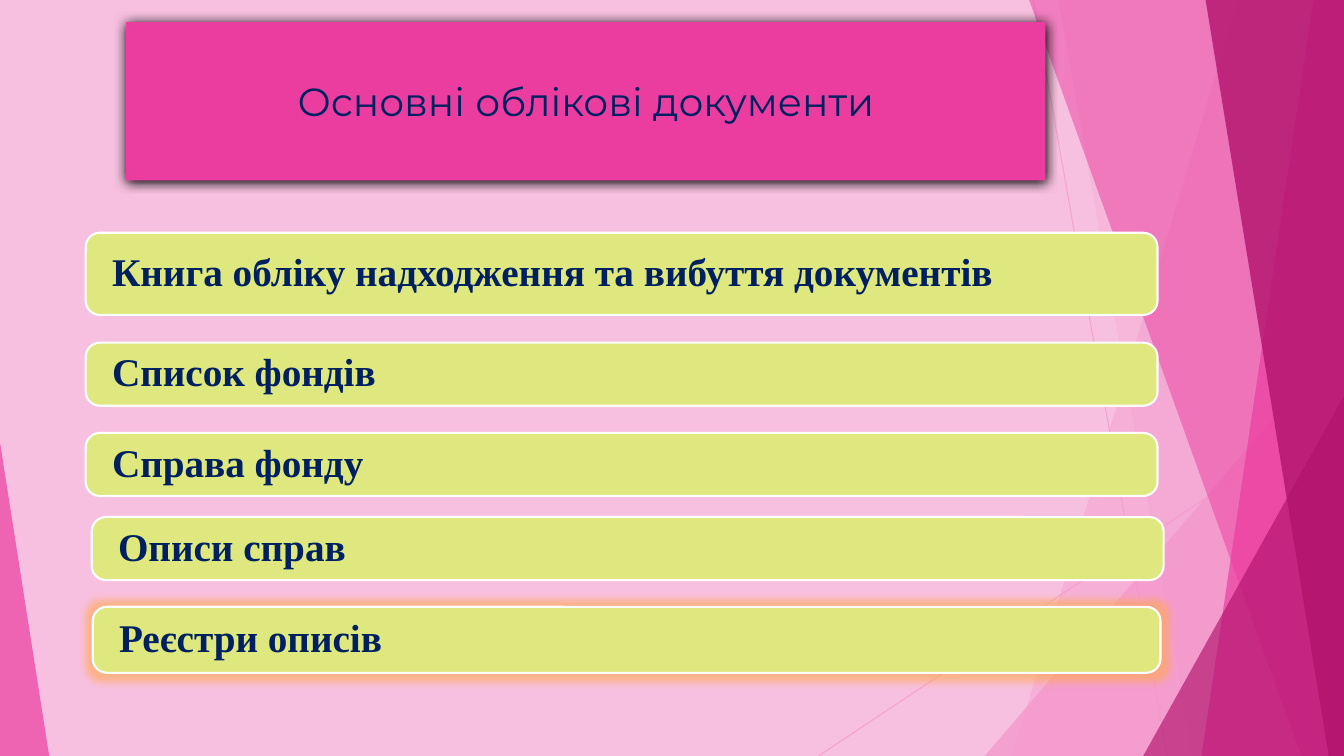
from dataclasses import dataclass

from lxml import etree
from pptx import Presentation, util as u
from pptx.dml.color import RGBColor
from pptx.enum import shapes, text
from pptx.oxml import ns


@dataclass(frozen=True)
class Theme:
    ground: str = "F8C0E0"
    light: str = "F496CB"
    pink: str = "EB3D9F"
    plum: str = "B2136D"
    card: str = "DEE87E"
    ink: str = "002060"
    border: str = "FFFFFF"
    shade: str = "000000"
    glow: str = "FFAA50"
    title_font: str = "Montserrat"
    card_font: str = "Times New Roman"
    size: float = 28
    hairline: float = 0.75
    outline: float = 1.5


THEME = Theme()


@dataclass(frozen=True)
class Box:
    left: int
    top: int
    width: int
    height: int

    def point(self, column, row):
        return (self.left + round(self.width * column / 100),
                self.top + round(self.height * row / 100))

    def region(self, column, row, columns, rows):
        return Box(*self.point(column, row),
                   round(self.width * columns / 100),
                   round(self.height * rows / 100))

    @property
    def bounds(self):
        return self.left, self.top, self.width, self.height


def add_node(parent, tag, **attributes):
    node = etree.SubElement(parent, ns.qn(tag))
    for name, value in attributes.items():
        node.set(name, str(value))
    return node


def paint(fill, color):
    fill.solid()
    fill.fore_color.rgb = RGBColor.from_string(color)


def fade(shape, opacity):
    for color in shape._element.spPr.iter(ns.qn("a:srgbClr")):
        add_node(color, "a:alpha", val=opacity * 1000)


def add_effect(shape, tag, color, opacity, **attributes):
    shape.shadow.inherit = False
    effects = shape._element.spPr.find(ns.qn("a:effectLst"))
    effect = add_node(effects, tag, **attributes)
    add_node(add_node(effect, "a:srgbClr", val=color),
             "a:alpha", val=opacity * 1000)


def write(frame, words, font, bold, align):
    frame.word_wrap = True
    frame.auto_size = text.MSO_AUTO_SIZE.NONE
    frame.vertical_anchor = text.MSO_ANCHOR.MIDDLE
    para = frame.paragraphs[0]
    para.text = words
    para.alignment = align
    para.font.name = font
    para.font.size = u.Pt(THEME.size)
    para.font.bold = bold
    para.font.color.rgb = RGBColor.from_string(THEME.ink)
    return para


def draw_facets(page, box):
    for start, end in (((76.88, 0), (86.84, 100)), ((100, 53.73), (60.9, 100))):
        line = page.shapes.add_connector(
            shapes.MSO_CONNECTOR.STRAIGHT, *box.point(*start), *box.point(*end))
        line.line.width = u.Pt(THEME.hairline)
        paint(line.line.fill, THEME.light)
        fade(line, 70)
        add_node(line._element.spPr, "a:effectLst")

    right_edge = [(100, 0), (100, 100)]
    facets = [
        ([(92.1, 0), *right_edge, (75.3, 100)], THEME.light, 36),
        ([(78.75, 0), *right_edge, (88.75, 100)], THEME.light, 20),
        ([(100, 44.4), (100, 100), (73.27, 100)], THEME.light, 72),
        ([(76.57, 0), *right_edge, (96.82, 100)], THEME.pink, 50),
        ([(97.72, 0), *right_edge, (89.4, 100)], THEME.pink, 70),
        ([(89.7, 0), *right_edge, (98.86, 100)], THEME.plum, 80),
        ([(100, 52.4), (100, 100), (85.06, 100)], THEME.plum, 66),
        ([(0, 58.53), (3.66, 100), (0, 100)], THEME.pink, 70),
    ]
    for corners, color, opacity in facets:
        first, *others = [box.point(*corner) for corner in corners]
        builder = page.shapes.build_freeform(*first)
        builder.add_line_segments(others, close=True)
        facet = builder.convert_to_shape()
        facet.shadow.inherit = False
        facet.line.fill.background()
        paint(facet.fill, color)
        fade(facet, opacity)


def draw_title(page, box, words):
    title = page.shapes.title
    title.left, title.top, title.width, title.height = box.bounds
    outline = add_node(title._element.spPr, "a:prstGeom", prst="ellipse")
    add_node(outline, "a:avLst")
    paint(title.fill, THEME.pink)
    title.line.fill.background()
    add_effect(title, "a:outerShdw", THEME.shade, 100,
               blurRad=u.Pt(8.5), dist=u.Pt(1), dir=5400000, rotWithShape=0)
    write(title.text_frame, words, THEME.title_font, False, text.PP_ALIGN.CENTER)
    page.shapes._spTree.append(title._element)


def draw_card(page, box, words):
    card = page.shapes.add_shape(
        shapes.MSO_SHAPE.ROUNDED_RECTANGLE, *box.bounds)
    card.adjustments[0] = u.Inches(0.14) / box.height
    card.shadow.inherit = False
    paint(card.fill, THEME.card)
    paint(card.line.fill, THEME.border)
    card.line.width = u.Pt(THEME.outline)
    frame = card.text_frame
    frame.margin_left = frame.margin_right = u.Inches(0.22)
    frame.margin_top = frame.margin_bottom = 0
    para = write(frame, words, THEME.card_font, True, text.PP_ALIGN.LEFT)
    para.line_spacing = 0.9
    return card


def draw_documents(page, box):
    documents = [
        ("Книга обліку надходження та вибуття документів", (0, 0, 99.44, 18.67)),
        ("Список фондів", (0, 24.97, 99.44, 14.32)),
        ("Справа фонду", (0, 45.48, 99.44, 14.32)),
        ("Описи справ", (0.56, 64.6, 99.44, 14.32)),
        ("Реєстри описів", (0.65, 85, 99.06, 15)),
    ]
    for words, place in documents:
        card = draw_card(page, box.region(*place), words)
    add_effect(card, "a:glow", THEME.glow, 60, rad=u.Pt(11))


def main():
    deck = Presentation()
    deck.slide_width, deck.slide_height = u.Inches(13.33), u.Inches(7.5)
    page = deck.slides.add_slide(deck.slide_layouts.get_by_name("Title Only"))
    paint(page.background.fill, THEME.ground)
    whole = Box(0, 0, deck.slide_width, deck.slide_height)
    draw_facets(page, whole)
    draw_title(page, whole.region(9.38, 2.93, 68.4, 20.93),
               "Основні облікові документи")
    draw_documents(page, whole.region(6.38, 30.8, 80.2, 58.2))
    deck.save("out.pptx")


if __name__ == "__main__":
    main()
